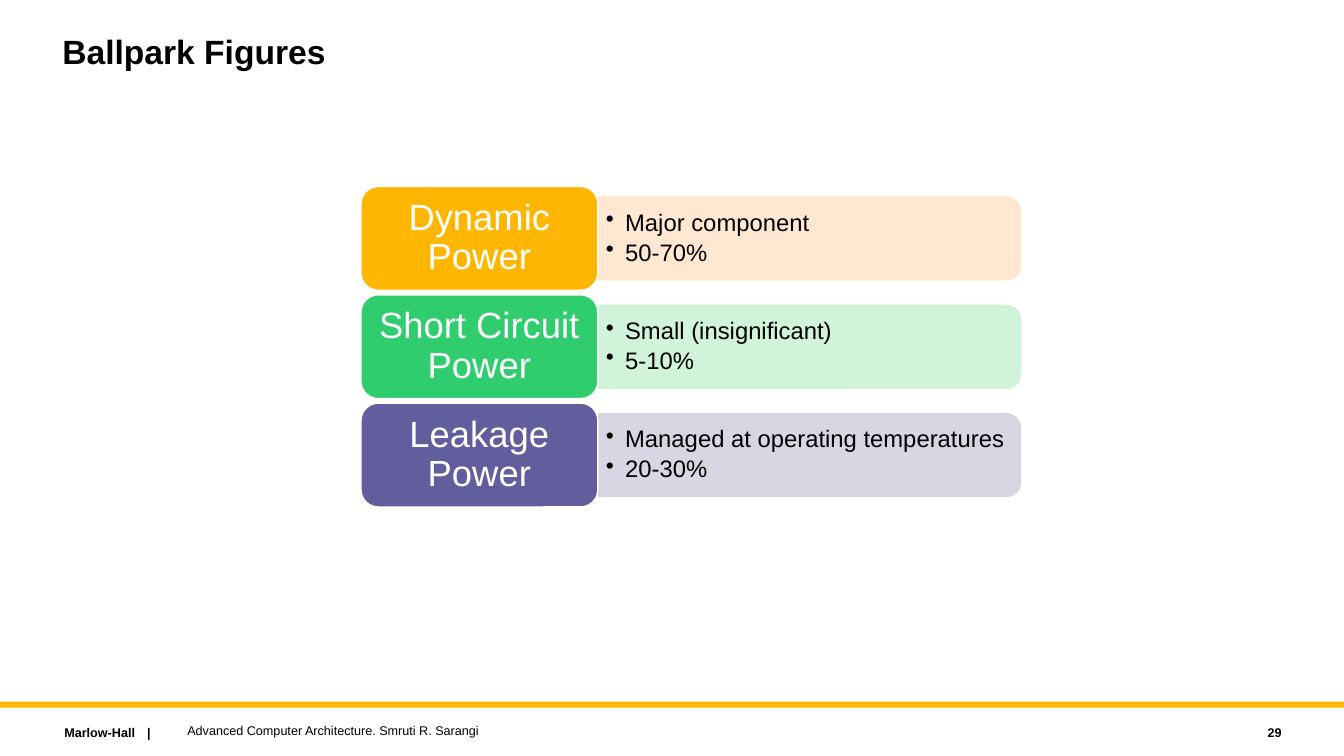
from dataclasses import dataclass

from lxml import etree
from pptx import Presentation
from pptx import util as u
from pptx.dml.color import RGBColor
from pptx.enum import shapes, text
from pptx.oxml import ns


@dataclass(frozen=True)
class Theme:
    font: str = "Arial"
    ink: str = "000000"
    paper: str = "FFFFFF"
    accent: str = "FFB600"
    title: int = 24
    label: int = 26
    detail: int = 17
    footer: int = 9


THEME = Theme()
ROW_TOP, ROW_PITCH = 1.85, 1.075
LABEL_LEFT, LABEL_WIDTH, LABEL_HEIGHT = 3.58, 2.35, 1.03
BAR_WIDTH, BAR_HEIGHT = 4.18, 0.82
DETAIL_HEIGHT = 0.74

POWER_KINDS = [
    ("Dynamic Power", ["Major component", "50-70%"], THEME.accent, "FFE5CC"),
    ("Short Circuit Power", ["Small (insignificant)", "5-10%"], "2FCD6E", "CDF2D7"),
    ("Leakage Power", ["Managed at operating temperatures", "20-30%"], "625D9C", "D3D2DF"),
]


def apply(target, values):
    for name, value in values.items():
        setattr(target, name, value)


def add_properties(paragraph, tag, **attributes):
    return etree.SubElement(paragraph._p.get_or_add_pPr(), ns.qn(tag), attributes)


def style_font(paragraph, size, color=THEME.ink, bold=False):
    apply(paragraph.font, {"name": THEME.font, "size": u.Pt(size), "bold": bold})
    paragraph.font.color.rgb = RGBColor.from_string(color)


def set_frame(frame, insets=(0.1, 0.05), anchor=text.MSO_ANCHOR.MIDDLE):
    side, edge = (u.Inches(inset) for inset in insets)
    apply(frame, {
        "word_wrap": True, "vertical_anchor": anchor,
        "margin_left": side, "margin_right": side,
        "margin_top": edge, "margin_bottom": edge,
    })


def add_panel(slide, preset, box, fill, line=None, alpha=None):
    panel = slide.shapes.add_shape(preset, *map(u.Inches, box))
    panel.shadow.inherit = False
    panel.fill.solid()
    panel.fill.fore_color.rgb = RGBColor.from_string(fill)
    if line is None:
        panel.line.fill.background()
    else:
        panel.line.width = u.Pt(1)
        panel.line.color.rgb = RGBColor.from_string(line)
    if alpha is not None:
        for color in panel._element.spPr.iter(ns.qn("a:srgbClr")):
            etree.SubElement(color, ns.qn("a:alpha"), val=str(alpha * 1000))
    return panel


def add_caption(slide, words, box, size, bold=False, anchor=text.MSO_ANCHOR.MIDDLE,
                align=text.PP_ALIGN.LEFT, spacing=1.0, tab=None):
    frame = slide.shapes.add_textbox(*map(u.Inches, box)).text_frame
    set_frame(frame, anchor=anchor)
    caption = frame.paragraphs[0]
    caption.text = words
    apply(caption, {"alignment": align, "line_spacing": spacing})
    if tab is not None:
        stops = add_properties(caption, "a:tabLst")
        etree.SubElement(stops, ns.qn("a:tab"), pos=str(u.Inches(tab)), algn="l")
    style_font(caption, size, bold=bold)


def add_details(slide, details, box):
    frame = slide.shapes.add_textbox(*map(u.Inches, box)).text_frame
    set_frame(frame, insets=(0.07, 0.04))
    for index, detail in enumerate(details):
        item = frame.add_paragraph() if index else frame.paragraphs[0]
        item.text = detail
        apply(item, {"line_spacing": 0.9, "space_after": u.Pt(3)})
        properties = item._p.get_or_add_pPr()
        properties.set("marL", str(u.Inches(0.19)))
        properties.set("indent", str(u.Inches(-0.19)))
        add_properties(item, "a:buChar", char="•")
        style_font(item, THEME.detail)


def add_power_row(slide, top, name, details, color, tint):
    middle = top + LABEL_HEIGHT / 2
    seam = LABEL_LEFT + LABEL_WIDTH
    bar_center = seam + 0.01 + BAR_WIDTH / 2
    bar = add_panel(slide, shapes.MSO_SHAPE.ROUND_2_SAME_RECTANGLE,
                    (bar_center - BAR_HEIGHT / 2, middle - BAR_WIDTH / 2,
                     BAR_HEIGHT, BAR_WIDTH), tint, line=tint, alpha=90)
    bar.rotation = 90
    add_details(slide, details,
                (seam + 0.01, middle - DETAIL_HEIGHT / 2, 4.14, DETAIL_HEIGHT))
    label = add_panel(slide, shapes.MSO_SHAPE.ROUNDED_RECTANGLE,
                      (LABEL_LEFT, top, LABEL_WIDTH, LABEL_HEIGHT),
                      color, line=THEME.paper)
    set_frame(label.text_frame, insets=(0.11, 0.05))
    heading = label.text_frame.paragraphs[0]
    heading.text = name
    apply(heading, {"alignment": text.PP_ALIGN.CENTER, "line_spacing": 0.9})
    style_font(heading, THEME.label, THEME.paper)


def add_footer(slide):
    add_panel(slide, shapes.MSO_SHAPE.RECTANGLE, (0, 6.96, 13.33, 0.06), THEME.accent)
    add_caption(slide, "Marlow-Hall\t|", (0.54, 7.14, 2.27, 0.25), THEME.footer,
                bold=True, anchor=text.MSO_ANCHOR.TOP, tab=0.82)
    add_caption(slide, "Advanced Computer Architecture. Smruti R. Sarangi",
                (1.76, 7.12, 8, 0.25), THEME.footer)
    add_caption(slide, "29", (11.41, 7.14, 1.4, 0.25), THEME.footer,
                bold=True, align=text.PP_ALIGN.RIGHT)


def main():
    deck = Presentation()
    apply(deck, {"slide_width": u.Inches(13.33), "slide_height": u.Inches(7.5)})
    slide = deck.slides.add_slide(deck.slide_layouts[6])
    add_footer(slide)
    add_caption(slide, "Ballpark Figures", (0.52, 0.3, 10, 0.9), THEME.title,
                bold=True, anchor=text.MSO_ANCHOR.TOP, spacing=0.9)
    for row, power_kind in enumerate(POWER_KINDS):
        add_power_row(slide, ROW_TOP + row * ROW_PITCH, *power_kind)
    deck.save("out.pptx")


if __name__ == "__main__":
    main()
